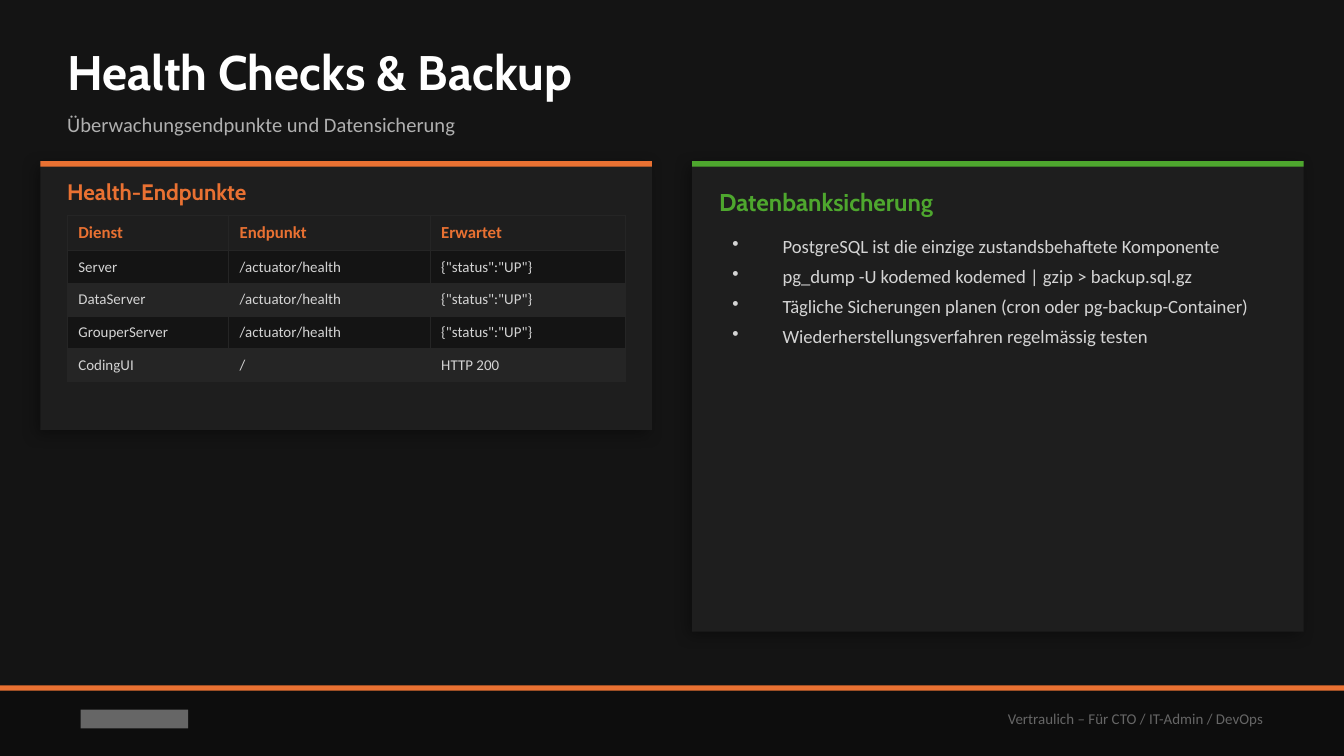
from lxml import etree
from pptx import Presentation
from pptx import util as u
from pptx.dml.color import RGBColor
from pptx.enum import shapes, text
from pptx.oxml import parse_xml
from pptx.oxml.ns import nsdecls, qn

PX = 4572
COLORS = {
    "background": "141414", "footer": "0D0D0D", "card": "1E1E1E", "band": "252525",
    "orange": "E97132", "green": "4EA72E", "white": "FFFFFF", "body": "D4D4D4",
    "subtitle": "B0B0B0", "muted": "666666", "shadow": "000000",
}
HEADING, BODY = "Cabin", "Calibri"


def color(name):
    return RGBColor.from_string(COLORS[name])


class SlideBuilder:
    def __init__(self, deck):
        self.slide = deck.slides.add_slide(deck.slide_layouts[6])
        fill = self.slide.background.fill
        fill.solid()
        fill.fore_color.rgb = color("background")

    def style(self, span, size, shade, font=BODY, bold=False):
        span.font.size = u.Pt(size)
        span.font.name = font
        span.font.bold = bold
        span.font.color.rgb = color(shade)

    def rect(self, x, y, w, h, shade):
        box = self.slide.shapes.add_shape(
            shapes.MSO_SHAPE.RECTANGLE, *[n * PX for n in (x, y, w, h)])
        box.shadow.inherit = False
        box.fill.solid()
        box.fill.fore_color.rgb = color(shade)
        box.line.fill.background()
        return box

    def card(self, x, y, w, h, accent):
        box = self.rect(x, y, w, h, "card")
        effects = box._element.spPr.find(qn("a:effectLst"))
        effects.append(parse_xml(
            f'<a:outerShdw {nsdecls("a")} blurRad="{u.Pt(8)}" dist="{u.Pt(3)}" '
            f'dir="{135 * 60000}" algn="bl" rotWithShape="0">'
            f'<a:srgbClr val="{COLORS["shadow"]}"><a:alpha val="35000"/></a:srgbClr>'
            '</a:outerShdw>'))
        self.rect(x, y, w, 8, accent)

    def frame(self, x, y, w, h, inset=True, middle=True):
        box = self.slide.shapes.add_textbox(*[n * PX for n in (x, y, w, h)])
        frame = box.text_frame
        frame.word_wrap = True
        if middle:
            frame.vertical_anchor = text.MSO_ANCHOR.MIDDLE
        if not inset:
            frame.margin_left = frame.margin_right = 0
            frame.margin_top = frame.margin_bottom = 0
        return frame

    def label(self, x, y, w, h, words, size, shade, font=BODY, bold=False):
        frame = self.frame(x, y, w, h, inset=False)
        frame.text = words
        self.style(frame.paragraphs[0].runs[0], size, shade, font, bold)

    def footer(self, note):
        self.rect(0, 1020, 2000, 105, "footer")
        self.rect(0, 1020, 2000, 8, "orange")
        self.rect(120, 1056, 160, 28, "muted")
        para = self.frame(1100, 1030, 800, 80).paragraphs[0]
        para.text = note
        para.alignment = text.PP_ALIGN.RIGHT
        self.style(para.runs[0], 8, "muted")

    def bullets(self, x, y, w, h, items):
        frame = self.frame(x, y, w, h, middle=False)
        frame.text = "\n".join(items)
        for para in frame.paragraphs:
            props = para._p.get_or_add_pPr()
            props.set("marL", str(75 * PX))
            props.set("indent", str(-75 * PX))
            etree.SubElement(props, qn("a:buSzPct")).set("val", "100000")
            etree.SubElement(props, qn("a:buChar")).set("char", "•")
            para.space_after = u.Pt(4)
            self.style(para.runs[0], 10, "body")

    def cell(self, cell, words, fill, *look):
        cell.text = words
        cell.vertical_anchor = text.MSO_ANCHOR.MIDDLE
        cell.margin_left = cell.margin_right = u.Pt(6)
        cell.margin_top = cell.margin_bottom = u.Pt(4)
        props = cell._tc.get_or_add_tcPr()
        for side in "LRTB":
            props.append(parse_xml(
                f'<a:ln{side} {nsdecls("a")} w="{u.Pt(0.5)}"><a:solidFill>'
                f'<a:srgbClr val="{COLORS["band"]}"/></a:solidFill></a:ln{side}>'))
        cell.fill.solid()
        cell.fill.fore_color.rgb = color(fill)
        self.style(cell.text_frame.paragraphs[0].runs[0], *look)

    def table(self, x, y, widths, row_height, rows):
        table = self.slide.shapes.add_table(
            len(rows), len(widths), x * PX, y * PX,
            sum(widths) * PX, len(rows) * row_height * PX).table
        table.first_row = table.horz_banding = False
        for column, width in zip(table.columns, widths):
            column.width = width * PX
        for r, row in enumerate(rows):
            if r == 0:
                look = ("card", 9, "orange", BODY, True)
            else:
                look = ("background" if r % 2 else "band", 8, "body")
            for c, words in enumerate(row):
                self.cell(table.cell(r, c), words, *look)


def main():
    deck = Presentation()
    deck.slide_width, deck.slide_height = 2000 * PX, 1125 * PX
    page = SlideBuilder(deck)

    page.footer("Vertraulich – Für CTO / IT-Admin / DevOps")
    page.label(100, 50, 1800, 110, "Health Checks & Backup", 26, "white", HEADING, True)
    page.label(100, 150, 1800, 70, "Überwachungsendpunkte und Datensicherung", 11, "subtitle")

    page.card(60, 240, 910, 400, "orange")
    page.label(100, 260, 830, 50, "Health-Endpunkte", 12, "orange", HEADING, True)
    health, status = "/actuator/health", '{"status":"UP"}'
    page.table(100, 320, [240, 300, 290], 40, [
        ("Dienst", "Endpunkt", "Erwartet"),
        ("Server", health, status),
        ("DataServer", health, status),
        ("GrouperServer", health, status),
        ("CodingUI", "/", "HTTP 200"),
    ])

    page.card(1030, 240, 910, 700, "green")
    page.label(1070, 270, 830, 60, "Datenbanksicherung", 13, "green", HEADING, True)
    page.bullets(1070, 340, 830, 560, [
        "PostgreSQL ist die einzige zustandsbehaftete Komponente",
        "pg_dump -U kodemed kodemed | gzip > backup.sql.gz",
        "Tägliche Sicherungen planen (cron oder pg-backup-Container)",
        "Wiederherstellungsverfahren regelmässig testen",
    ])
    deck.save("out.pptx")


if __name__ == "__main__":
    main()
